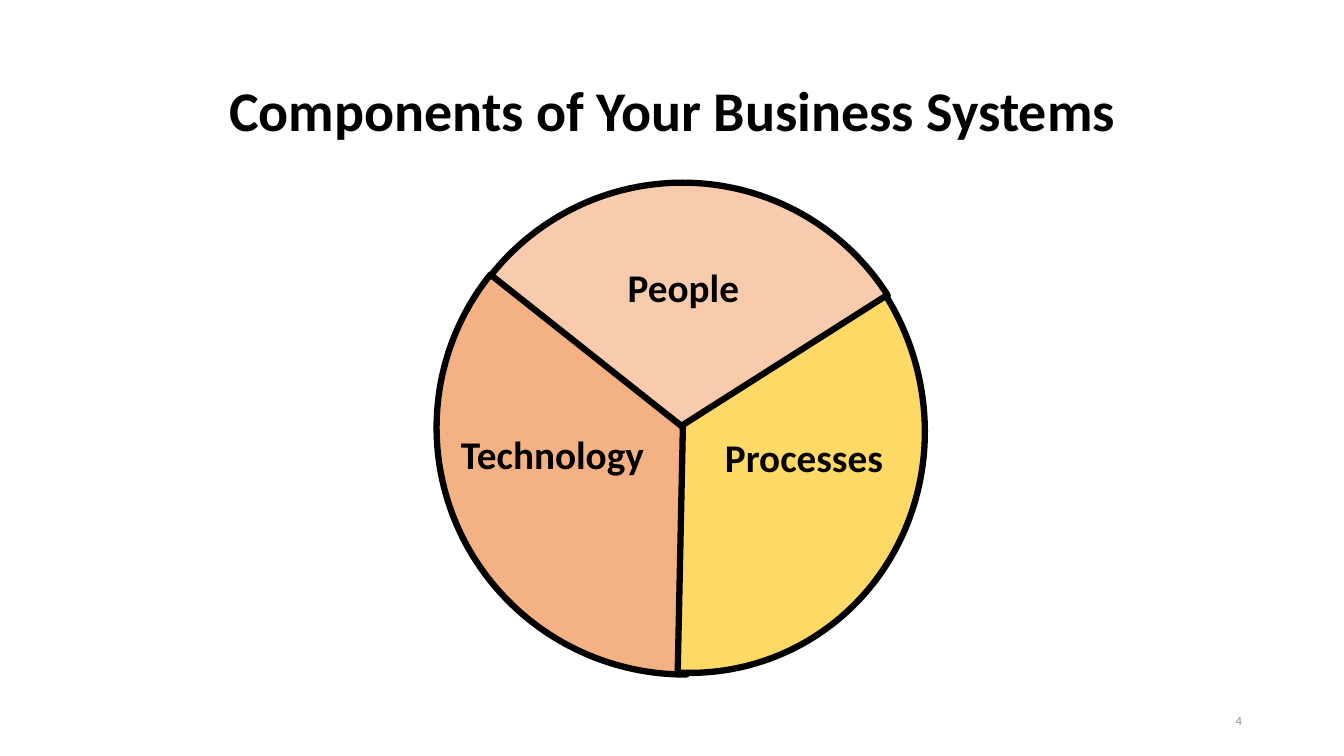
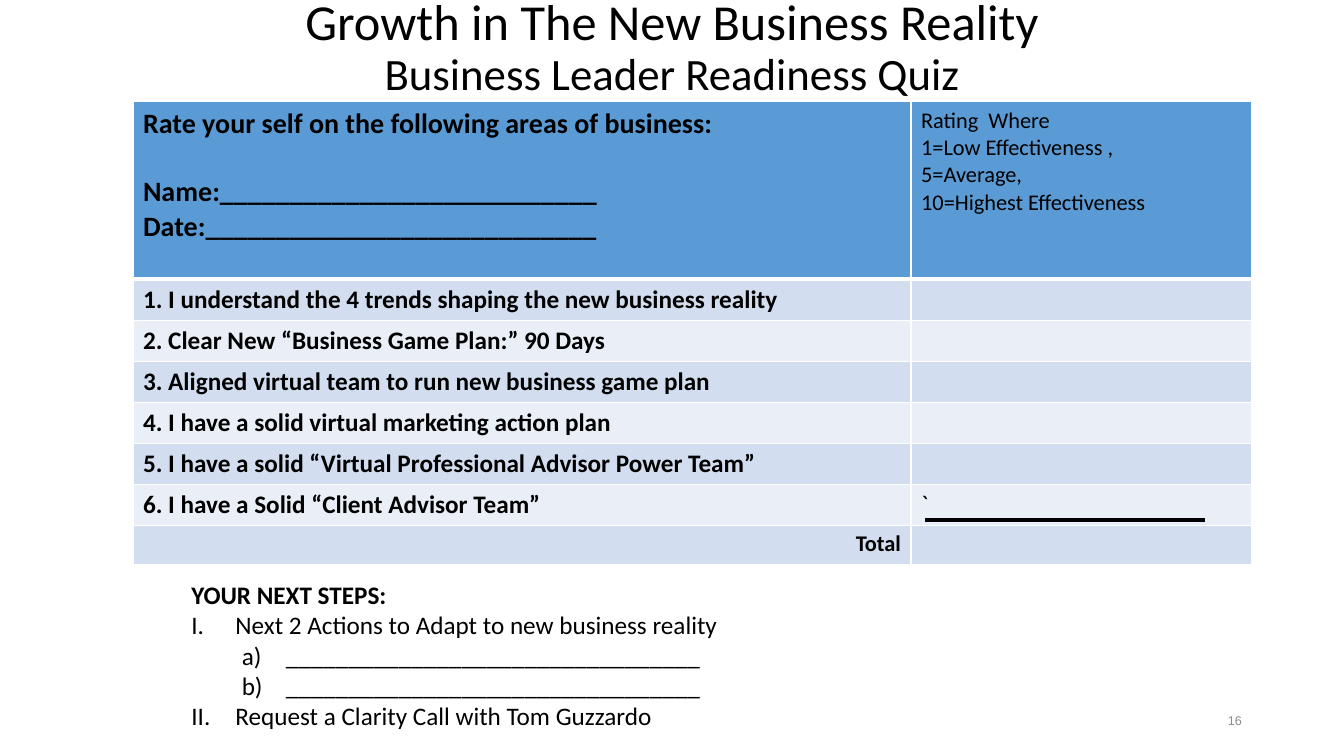
from dataclasses import dataclass

from lxml.etree import SubElement
from pptx import Presentation
from pptx.dml.color import RGBColor
from pptx.enum.shapes import MSO_CONNECTOR, MSO_SHAPE
from pptx.enum.text import MSO_ANCHOR, MSO_AUTO_SIZE, PP_ALIGN
from pptx.oxml.ns import qn
from pptx.presentation import Presentation as Deck
from pptx.slide import Slide
from pptx.table import _Cell
from pptx.text.text import TextFrame, _Paragraph
from pptx.util import Pt

FONT = "Calibri"
BLACK = "000000"
WHITE = "FFFFFF"
GRAY = "8C8C8C"
HEADER_BLUE = "5B9BD5"
BAND_BLUES = ("D2DEEF", "EAEFF7")

TITLE_ONLY = 5
CONTENT_LEFT = 66.2
CONTENT_WIDTH = 828
LABEL_HEIGHT = 48


@dataclass(frozen=True)
class Box:
    left: float
    top: float
    width: float
    height: float

    def lengths(self) -> tuple[Pt, Pt, Pt, Pt]:
        return Pt(self.left), Pt(self.top), Pt(self.width), Pt(self.height)


@dataclass(frozen=True)
class Line:
    """One paragraph of a text box or table cell."""
    text: str
    size: float
    bold: bool = False
    align: PP_ALIGN = PP_ALIGN.LEFT
    space_before: float = 0
    numbering: str = ""
    level: int = 0
    color: str = BLACK
    font: str = FONT


@dataclass(frozen=True)
class Sector:
    """A pie slice; start and end are its adjustment values."""
    label: str
    fill: str
    box: Box
    rotation: float
    start: float
    end: float
    label_left: float
    label_top: float
    label_width: float


SECTORS = (
    Sector("People", "F8CBAD", Box(313.2, 130.3, 347.8, 348.5), 52.5, 99.03, 165.02,
           432.7, 184.3, 110.9),
    Sector("Technology", "F4B183", Box(313.2, 128.9, 351.4, 354.2), 283.3, 99.75, 177.07,
           308.9, 303.8, 171.4),
    Sector("Processes", "FFD966", Box(316.1, 125.3, 343.4, 356.4), 156.1, 102.88, 177.07,
           499, 306, 150.5),
)

QUIZ_HEADER = (
    (
        Line("Rate your self on the following areas of business:", 20, bold=True),
        Line("Name:" + "_" * 27, 20, bold=True, space_before=24.4),
        Line("Date:" + "_" * 28, 20, bold=True),
    ),
    tuple(Line(text, 16) for text in (
        "Rating  Where", "1=Low Effectiveness ,", "5=Average,", "10=Highest Effectiveness",
    )),
)
QUIZ_STATEMENTS = (
    "1. I understand the 4 trends shaping the new business reality",
    "2. Clear New “Business Game Plan:” 90 Days",
    "3. Aligned virtual team to run new business game plan",
    "4. I have a solid virtual marketing action plan",
    "5. I have a solid “Virtual Professional Advisor Power Team”",
    "6. I have a Solid “Client Advisor Team”",
)
COLUMN_WIDTHS = (555.8, 243.4)
HEADER_HEIGHT, STATEMENT_HEIGHT, TOTAL_HEIGHT = 126.7, 29.3, 28

ROMAN, LETTER = "romanUcPeriod", "alphaLcParenR"
ANSWER_LINE = Line("_" * 33, 18, numbering=LETTER, level=1)
NEXT_STEPS = (
    Line("YOUR NEXT STEPS:", 18, bold=True),
    Line("Next 2 Actions to Adapt to new business reality", 18, numbering=ROMAN),
    ANSWER_LINE,
    ANSWER_LINE,
    Line("Request a Clarity Call with Tom Guzzardo", 18, numbering=ROMAN),
)


def rgb(color: str) -> RGBColor:
    return RGBColor.from_string(color)


def add_run(paragraph: _Paragraph, text: str, size: float, bold: bool = False,
            color: str = BLACK, font: str = FONT) -> None:
    run = paragraph.add_run()
    run.text = text
    run.font.name = font
    run.font.size = Pt(size)
    run.font.bold = bold
    run.font.color.rgb = rgb(color)


def number_paragraph(paragraph: _Paragraph, scheme: str, level: int) -> None:
    """Apply automatic numbering with a hanging indent."""
    paragraph.level = level
    properties = paragraph._p.get_or_add_pPr()
    properties.set("marL", str(Pt(31.5 + 36 * level)))
    properties.set("indent", str(Pt(-31.5)))
    SubElement(properties, qn("a:buAutoNum"), type=scheme)


def write_lines(frame: TextFrame, lines: tuple[Line, ...]) -> None:
    for index, line in enumerate(lines):
        paragraph = frame.add_paragraph() if index else frame.paragraphs[0]
        paragraph.alignment = line.align
        if line.space_before:
            paragraph.space_before = Pt(line.space_before)
        if line.numbering:
            number_paragraph(paragraph, line.numbering, line.level)
        add_run(paragraph, line.text, line.size, line.bold, line.color, line.font)


def add_text(slide: Slide, box: Box, *lines: Line,
             anchor: MSO_ANCHOR = MSO_ANCHOR.TOP) -> None:
    frame = slide.shapes.add_textbox(*box.lengths()).text_frame
    frame.word_wrap = True
    frame.vertical_anchor = anchor
    write_lines(frame, lines)


def add_titled_slide(presentation: Deck, box: Box, title_lines: tuple[Line, ...],
                     number: Line) -> Slide:
    slide = presentation.slides.add_slide(presentation.slide_layouts[TITLE_ONLY])
    title = slide.shapes.title
    title.left, title.top, title.width, title.height = box.lengths()
    frame = title.text_frame
    frame.auto_size = MSO_AUTO_SIZE.NONE
    frame.word_wrap = True
    frame.vertical_anchor = MSO_ANCHOR.MIDDLE
    paragraph = frame.paragraphs[0]
    paragraph.alignment = PP_ALIGN.CENTER
    paragraph.line_spacing = 0.9
    for index, line in enumerate(title_lines):
        if index:
            paragraph.add_line_break()
        add_run(paragraph, line.text, line.size, line.bold)
    add_text(slide, Box(678.2, 500.4, 216, 28.8), number, anchor=MSO_ANCHOR.MIDDLE)
    return slide


def page_number(text: str, font: str) -> Line:
    return Line(text, 9, align=PP_ALIGN.RIGHT, color=GRAY, font=font)


def add_sector(slide: Slide, sector: Sector) -> None:
    shape = slide.shapes.add_shape(MSO_SHAPE.PIE, *sector.box.lengths())
    shape.shadow.inherit = False
    shape.adjustments[0] = sector.start
    shape.adjustments[1] = sector.end
    shape.rotation = sector.rotation
    shape.fill.solid()
    shape.fill.fore_color.rgb = rgb(sector.fill)
    shape.line.color.rgb = rgb(BLACK)
    shape.line.width = Pt(4.5)
    label_box = Box(sector.label_left, sector.label_top, sector.label_width, LABEL_HEIGHT)
    add_text(slide, label_box, Line(sector.label, 28, bold=True, align=PP_ALIGN.CENTER))


def style_cell(cell: _Cell, fill: str, top: float, bottom: float) -> None:
    """Fill a cell and give it white borders; top and bottom are line widths."""
    properties = cell._tc.get_or_add_tcPr()
    for side, width in (("L", 1), ("R", 1), ("T", top), ("B", bottom)):
        border = SubElement(properties, qn(f"a:ln{side}"), w=str(Pt(width)))
        SubElement(SubElement(border, qn("a:solidFill")), qn("a:srgbClr"), val=WHITE)
    cell.fill.solid()
    cell.fill.fore_color.rgb = rgb(fill)


def add_quiz_table(slide: Slide) -> None:
    statements = [((Line(text, 18, bold=True),), ()) for text in QUIZ_STATEMENTS]
    statements[-1] = (statements[-1][0], (Line("`", 18),))
    total = ((Line("Total", 16, bold=True, align=PP_ALIGN.RIGHT),), ())
    rows = [QUIZ_HEADER, *statements, total]
    heights = [HEADER_HEIGHT, *[STATEMENT_HEIGHT] * len(statements), TOTAL_HEIGHT]

    box = Box(95, 72.7, sum(COLUMN_WIDTHS), sum(heights))
    table = slide.shapes.add_table(len(rows), len(COLUMN_WIDTHS), *box.lengths()).table
    for column, width in zip(table.columns, COLUMN_WIDTHS):
        column.width = Pt(width)
    for row_index, (contents, height) in enumerate(zip(rows, heights)):
        row = table.rows[row_index]
        row.height = Pt(height)
        fill = BAND_BLUES[(row_index - 1) % 2] if row_index else HEADER_BLUE
        for cell, lines in zip(row.cells, contents):
            style_cell(cell, fill, top=3 if row_index == 1 else 1,
                       bottom=1 if row_index else 3)
            if lines:
                write_lines(cell.text_frame, lines)
            else:
                cell.margin_top = cell.margin_bottom = Pt(0)


def add_total_rule(slide: Slide) -> None:
    rule = slide.shapes.add_connector(
        MSO_CONNECTOR.STRAIGHT, Pt(661), Pt(371.5), Pt(861), Pt(371.5))
    rule.line.color.rgb = rgb(BLACK)
    rule.line.width = Pt(3)
    SubElement(rule._element.spPr, qn("a:effectLst"))


def add_components_slide(presentation: Deck) -> None:
    slide = add_titled_slide(
        presentation, Box(CONTENT_LEFT, 28.8, CONTENT_WIDTH, 104.4),
        (Line("Components of Your Business Systems", 40, bold=True),),
        page_number("4", FONT))
    for sector in SECTORS:
        add_sector(slide, sector)


def add_quiz_slide(presentation: Deck) -> None:
    slide = add_titled_slide(
        presentation, Box(CONTENT_LEFT, 10.8, CONTENT_WIDTH, 48.2),
        (Line("Growth in The New Business Reality", 36),
         Line("Business Leader Readiness Quiz", 32)),
        page_number("16", "Arial"))
    add_quiz_table(slide)
    add_text(slide, Box(129.6, 410.4, 507.6, 116.6), *NEXT_STEPS)
    add_total_rule(slide)


def main() -> None:
    presentation = Presentation()
    presentation.slide_width = Pt(960)
    presentation.slide_height = Pt(540)
    add_components_slide(presentation)
    add_quiz_slide(presentation)
    presentation.save("out.pptx")


if __name__ == "__main__":
    main()
